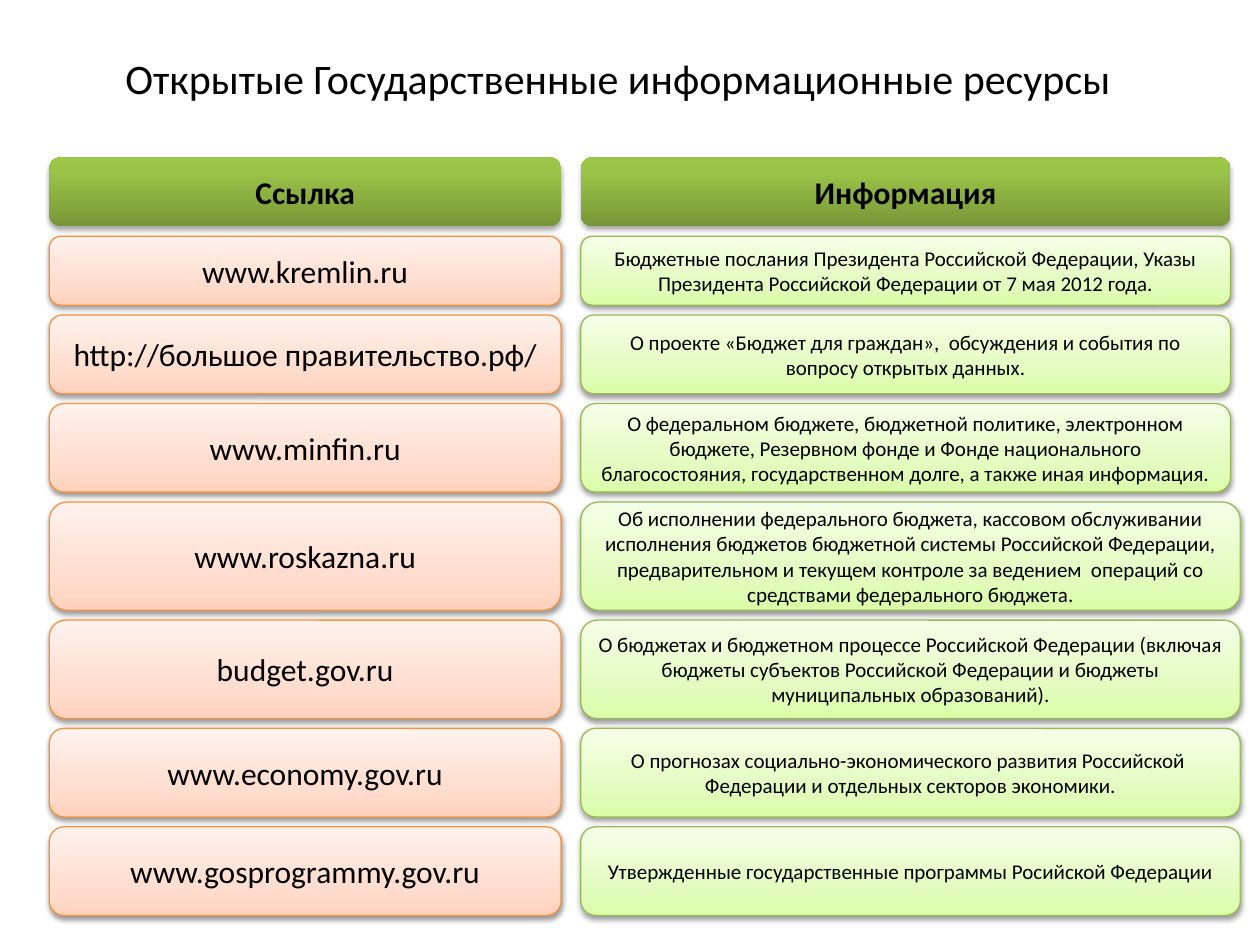
from dataclasses import dataclass

from lxml.etree import SubElement
from pptx import Presentation
from pptx.dml.color import RGBColor as RGB
from pptx.enum.shapes import MSO_SHAPE as Preset
from pptx.enum.text import MSO_ANCHOR as Anchor, PP_ALIGN as Align
from pptx.oxml.ns import qn
from pptx.shapes.autoshape import Shape
from pptx.slide import Slide
from pptx.util import Inches, Pt

BLACK = RGB(0x00, 0x00, 0x00)
ORANGE = RGB(0xF6, 0x92, 0x40)
GREEN = RGB(0x98, 0xB9, 0x55)
# Gradient stops run from the bottom edge to the top: percent, colour
OLIVE = ((0, RGB(0x77, 0x97, 0x37)), (80, RGB(0x9B, 0xC3, 0x48)), (100, RGB(0x9D, 0xC7, 0x46)))
PEACH = ((0, RGB(0xFF, 0xD2, 0xBD)), (35, RGB(0xFF, 0xDE, 0xD0)), (100, RGB(0xFF, 0xF2, 0xED)))
LIME = ((0, RGB(0xDA, 0xFD, 0xA7)), (35, RGB(0xE4, 0xFC, 0xC2)), (100, RGB(0xF5, 0xFF, 0xE7)))

UNIT = 10 / 128  # grid step in inches, also the gap between rows
TOP = 16
LINK_X, LINK_W = 5, 52
INFO_X = 59


@dataclass
class Style:
    stops: tuple
    line: RGB | None
    size: int
    bold: bool
    alpha: int
    drop: float


@dataclass
class Row:
    link: str
    info: str
    high: int
    wide: int = 67


HEAD = Style(OLIVE, None, 18, True, 35, 1.8)
LINK = Style(PEACH, ORANGE, 18, False, 38, 1.6)
INFO = Style(LIME, GREEN, 12, False, 38, 1.6)

ROWS = [
    Row("Ссылка", "Информация", 7, 66),
    Row("www.kremlin.ru",
        "Бюджетные послания Президента Российской Федерации, Указы "
        "Президента Российской Федерации от 7 мая 2012 года.", 7, 66),
    Row("http://большое правительство.рф/",
        "О проекте «Бюджет для граждан»,  обсуждения и события по "
        "вопросу открытых данных.", 8, 66),
    Row("www.minfin.ru",
        "О федеральном бюджете, бюджетной политике, электронном бюджете, "
        "Резервном фонде и Фонде национального благосостояния, "
        "государственном долге, а также иная информация.", 9, 66),
    Row("www.roskazna.ru",
        "Об исполнении федерального бюджета, кассовом обслуживании "
        "исполнения бюджетов бюджетной системы Российской Федерации, "
        "предварительном и текущем контроле за ведением  операций со "
        "средствами федерального бюджета.", 11),
    Row("budget.gov.ru",
        "О бюджетах и бюджетном процессе Российской Федерации (включая "
        "бюджеты субъектов Российской Федерации и бюджеты "
        "муниципальных образований).", 10),
    Row("www.economy.gov.ru",
        "О прогнозах социально-экономического развития Российской  "
        "Федерации и отдельных секторов экономики.", 9),
    Row("www.gosprogrammy.gov.ru",
        "Утвержденные государственные программы Росийской Федерации", 9),
]


def write(shape: Shape, text: str, size: int, bold: bool = False) -> None:
    frame = shape.text_frame
    frame.text = text
    frame.word_wrap = True
    frame.vertical_anchor = Anchor.MIDDLE
    para = frame.paragraphs[0]
    para.alignment = Align.CENTER
    font = para.runs[0].font
    font.name, font.size, font.bold = "Calibri", Pt(size), bold
    font.color.rgb = BLACK


def tint(node, color: RGB):
    """Add a colour to an XML node and return it."""
    return SubElement(node, qn("a:srgbClr"), val=str(color))


def shade(shape: Shape, stops: tuple) -> None:
    """Fill with a vertical gradient."""
    shape.fill.gradient()
    shape.fill.gradient_angle = 90
    group = shape._element.spPr.find(".//" + qn("a:gsLst"))
    for old in list(group):
        group.remove(old)
    for pos, color in stops:
        tint(SubElement(group, qn("a:gs"), pos=str(pos * 1000)), color)


def cast(shape: Shape, alpha: int, drop: float) -> None:
    """Give a soft shadow below the shape."""
    shape.shadow.inherit = False
    effects = shape._element.spPr.find(qn("a:effectLst"))
    outer = SubElement(effects, qn("a:outerShdw"), blurRad=str(Pt(3.1)),
                       dist=str(Pt(drop)), dir="5400000", rotWithShape="0")
    SubElement(tint(outer, BLACK), qn("a:alpha"), val=str(alpha * 1000))


def add_card(slide: Slide, box: tuple, text: str, style: Style) -> None:
    """Draw a rounded card; box is left, top, width and height in grid units."""
    shape = slide.shapes.add_shape(
        Preset.ROUNDED_RECTANGLE, *(Inches(n * UNIT) for n in box))
    shade(shape, style.stops)
    if style.line is None:
        shape.line.fill.background()
    else:
        shape.line.color.rgb = style.line
        shape.line.width = Pt(0.75)
    cast(shape, style.alpha, style.drop)
    write(shape, text, style.size, style.bold)


def main() -> None:
    deck = Presentation()
    deck.slide_width, deck.slide_height = Inches(10), Inches(7.5)
    slide = deck.slides.add_slide(deck.slide_layouts[6])

    title = slide.shapes.add_textbox(Inches(0.31), Inches(0.3), Inches(9.19), Inches(0.64))
    write(title, "Открытые Государственные информационные ресурсы", 24)

    top = TOP
    for i, row in enumerate(ROWS):
        left, right = (LINK, INFO) if i else (HEAD, HEAD)
        add_card(slide, (LINK_X, top, LINK_W, row.high), row.link, left)
        add_card(slide, (INFO_X, top, row.wide, row.high), row.info, right)
        top += row.high + 1

    deck.save("out.pptx")


if __name__ == "__main__":
    main()
